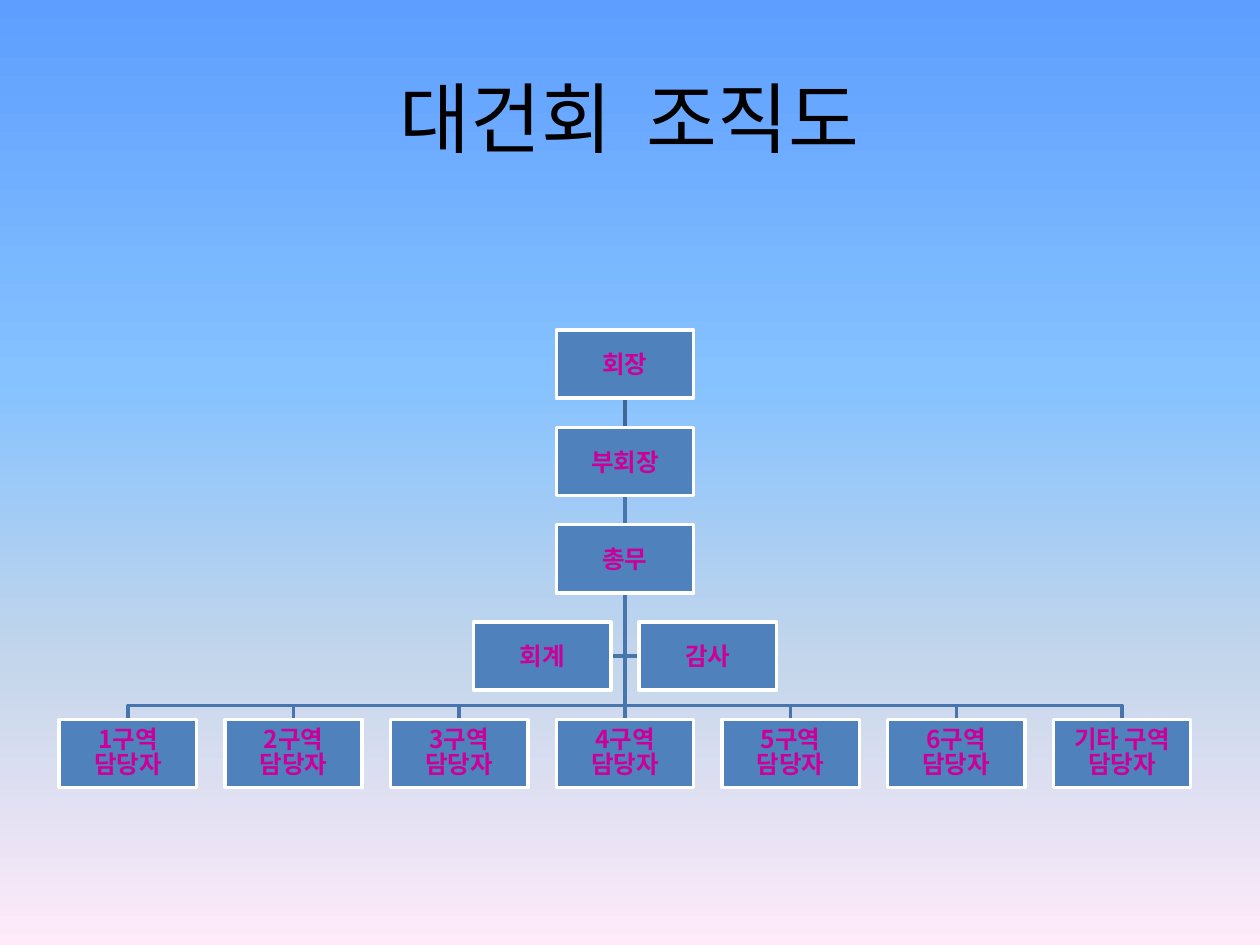
import copy

import pptx
import pptx.dml.color
import pptx.enum.shapes
import pptx.enum.text
import pptx.oxml
import pptx.oxml.ns
import pptx.util

Inches = pptx.util.Inches
Pt = pptx.util.Pt
qn = pptx.oxml.ns.qn
Middle = pptx.enum.text.MSO_ANCHOR.MIDDLE
Center = pptx.enum.text.PP_ALIGN.CENTER

COLORS = {
    "title": "000000",
    "label": "CC0099",
    "box": "4F81BD",
    "edge": "FFFFFF",
    "link": "4875AC",
    "top": "3F6797",
}
SKY = [(0, "5E9EFF"), (40, "85C2FF"), (70, "C4D6EB"), (100, "FFEBFA")]
FONT = "Noto Sans CJK KR"
WIDTH, HEIGHT = 1.09, 0.54
LEFT, TOP = 0.47, 2.62
STEP = (8.36 - LEFT) / 6
DROP = (5.71 - TOP) / 4
BUS = 5.6


def paint(name):
    return pptx.dml.color.RGBColor.from_string(COLORS[name])


class Chart:
    def __init__(self, slide):
        self.slide = slide
        self.shapes = slide.shapes
        self.tree = slide.shapes.element

    def sky(self, stops):
        fill = self.slide.background.fill
        fill.gradient()
        fill.gradient_angle = 270
        bed = next(self.slide.element.iter(qn("a:gsLst")))
        for old in list(bed):
            bed.remove(old)
        for place, color in stops:
            stop = pptx.oxml.parse_xml(
                f'<a:gs {pptx.oxml.ns.nsdecls("a")} pos="{place * 1000}">'
                f'<a:srgbClr val="{color}"/></a:gs>')
            bed.append(stop)

    def label(self, shape, lines, size, color, bold, inset):
        frame = shape.text_frame
        form = {"word_wrap": True, "vertical_anchor": Middle}
        for side in ("left", "right", "top", "bottom"):
            form[f"margin_{side}"] = Inches(inset)
        for key, value in form.items():
            setattr(frame, key, value)
        for rank, line in enumerate(lines):
            para = frame.add_paragraph() if rank else frame.paragraphs[0]
            para.alignment = Center
            if len(lines) > 1:
                para.line_spacing = 0.85
            run = para.add_run()
            run.text = line
            font = {"name": FONT, "size": Pt(size), "bold": bold}
            for key, value in font.items():
                setattr(run.font, key, value)
            run.font.color.rgb = paint(color)
            latin = next(run.font._element.iter(qn("a:latin")))
            asian = copy.deepcopy(latin)
            asian.tag = qn("a:ea")
            latin.addnext(asian)

    def title(self, text):
        area = map(Inches, (0.5, 0.3, 9, 1.25))
        self.label(self.shapes.add_textbox(*area), [text], 44, "title", False, 0.05)

    def box(self, col, row, *lines):
        area = (LEFT + col * STEP, TOP + row * DROP, WIDTH, HEIGHT)
        shape = self.shapes.add_shape(
            pptx.enum.shapes.MSO_SHAPE.RECTANGLE, *map(Inches, area))
        shape.shadow.inherit = False
        shape.fill.solid()
        shape.fill.fore_color.rgb = paint("box")
        self.line(shape, "edge")
        self.label(shape, lines, 14, "label", True, 0.01)
        return shape

    def line(self, shape, color):
        shape.line.color.rgb = paint(color)
        shape.line.width = Pt(2)

    def lower(self, shape):
        self.tree.remove(shape.element)
        self.tree.insert(2, shape.element)

    def link(self, head, foot, color="link"):
        wire = self.shapes.add_connector(
            pptx.enum.shapes.MSO_CONNECTOR.STRAIGHT, 0, 0, 0, 0)
        wire.begin_connect(head, 2)
        wire.end_connect(foot, 0)
        self.line(wire, color)
        wire.element.spPr.append(pptx.oxml.parse_xml(
            f'<a:effectLst {pptx.oxml.ns.nsdecls("a")}/>'))
        self.lower(wire)

    def elbow(self, head, *turns):
        start = (head.left + head.width // 2, head.top + head.height)
        pen = self.shapes.build_freeform(*start)
        pen.add_line_segments(turns, close=False)
        shape = pen.convert_to_shape()
        shape.shadow.inherit = False
        shape.fill.background()
        self.line(shape, "link")
        self.lower(shape)


def main():
    deck = pptx.Presentation()
    deck.slide_width, deck.slide_height = Inches(10), Inches(7.5)
    chart = Chart(deck.slides.add_slide(deck.slide_layouts[6]))
    chart.sky(SKY)
    chart.title("대건회  조직도")

    chair, vice, clerk = [
        chart.box(3, row, name) for row, name in enumerate(["회장", "부회장", "총무"])]
    zones = [f"{rank}구역" for rank in range(1, 7)] + ["기타 구역"]
    heads = [chart.box(col, 4, zone, "담당자") for col, zone in enumerate(zones)]
    purse = chart.box(2.5, 3, "회계")
    audit = chart.box(3.5, 3, "감사")

    chart.link(chair, vice, "top")
    chart.link(vice, clerk)
    mid = clerk.left + clerk.width // 2
    for head in heads:
        if head is heads[3]:
            chart.link(clerk, head)
        else:
            end = head.left + head.width // 2
            chart.elbow(clerk, (mid, Inches(BUS)), (end, Inches(BUS)), (end, head.top))
    for aide, side in ((purse, purse.left + purse.width), (audit, audit.left)):
        level = aide.top + aide.height // 2
        chart.elbow(clerk, (mid, level), (side, level))

    deck.save("out.pptx")


if __name__ == "__main__":
    main()
